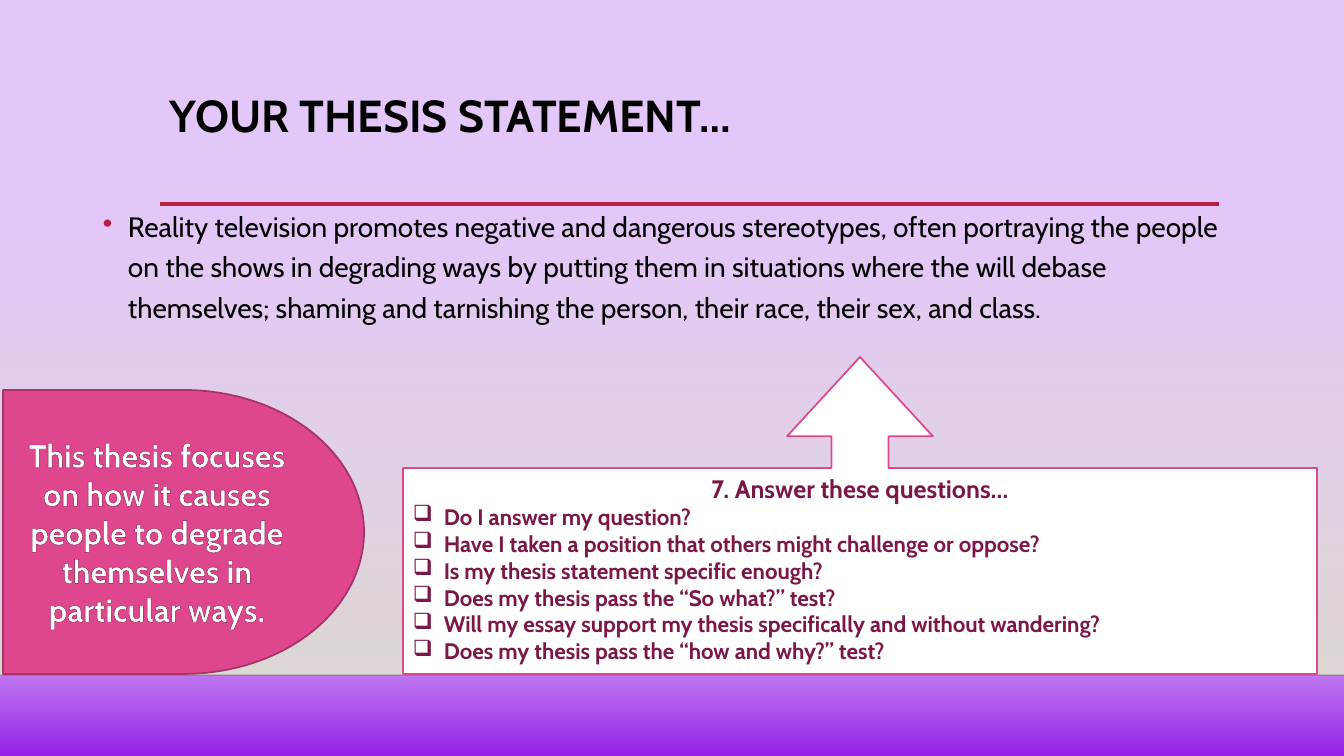
from lxml.etree import SubElement
from pptx import Presentation
from pptx.dml.color import RGBColor
from pptx.enum.shapes import MSO_CONNECTOR, MSO_SHAPE
from pptx.enum.text import MSO_ANCHOR, PP_ALIGN
from pptx.oxml.ns import qn
from pptx.util import Emu, Pt

SCALE = 12192000 / 1344
FONT = "Cabin"
BLACK, WHITE = "000000", "FFFFFF"
RED, PINK, PLUM, ROSE = "B71E42", "DE478E", "7C1646", "A43569"
SAND = "DFDBD5"

CHECKS = [
    "Do I answer my question?",
    "Have I taken a position that others might challenge or oppose?",
    "Is my thesis statement specific enough?",
    "Does my thesis pass the “So what?” test?",
    "Will my essay support my thesis specifically and without wandering?",
    "Does my thesis pass the “how and why?” test?",
]


def px(num):
    return Emu(round(num * SCALE))


def tint(code):
    return RGBColor.from_string(code)


def apply(item, vals):
    for name, val in vals.items():
        setattr(item, name, val)


def node(root, tag, **vals):
    return SubElement(root, qn(f"a:{tag}"), {k: str(v) for k, v in vals.items()})


def blend(fill, root, stops):
    fill.gradient()
    fill.gradient_angle = 270
    group = root.xpath(".//a:gsLst")[0]
    for old in list(group):
        group.remove(old)
    for pos, code, alpha in stops:
        stop = node(group, "gs", pos=pos * 1000)
        hue = node(stop, "srgbClr", val=code)
        if alpha < 100:
            node(hue, "alpha", val=alpha * 1000)


def write(para, text, size, code, bold=False, **form):
    apply(para, form)
    run = para.add_run()
    run.text = text
    apply(run.font, {"name": FONT, "size": Pt(size), "bold": bold})
    run.font.color.rgb = tint(code)
    return run


def bullet(para, mark, gap, code=None):
    props = para._p.get_or_add_pPr()
    for name, val in {"marL": px(gap), "indent": -px(gap)}.items():
        props.set(name, str(val))
    if code:
        node(node(props, "buClr"), "srgbClr", val=code)
    node(props, "buChar", char=mark)


def rule(slide, left, top, width, code, size, alpha=100):
    line = slide.shapes.add_connector(
        MSO_CONNECTOR.STRAIGHT, px(left), px(top), px(left + width), px(top))
    line.line.width = Pt(size)
    line.line.color.rgb = tint(code)
    if alpha < 100:
        hue = line._element.xpath(".//a:ln//a:srgbClr")[0]
        node(hue, "alpha", val=alpha * 1000)
    node(line._element.spPr, "effectLst")


def block(slide, kind, box, code, edge):
    shape = slide.shapes.add_shape(kind, *map(px, box))
    shape.shadow.inherit = False
    shape.fill.solid()
    shape.fill.fore_color.rgb = tint(code)
    shape.line.width = Pt(1.25)
    shape.line.color.rgb = tint(edge)
    shape.text_frame.word_wrap = True
    return shape


def label(slide, box):
    frame = slide.shapes.add_textbox(*map(px, box)).text_frame
    apply(frame, {"word_wrap": True, "vertical_anchor": MSO_ANCHOR.TOP})
    return frame.paragraphs[0]


def stage(slide, width, floor):
    blend(slide.background.fill, slide._element, [
        (0, "E4C7F9", 100), (74, "E4C7F9", 100),
        (83, "D7AAF6", 100), (100, "9622E7", 100)])
    top = 223
    wall = slide.shapes.add_shape(
        MSO_SHAPE.RECTANGLE, 0, px(top), px(width), px(floor - top))
    wall.shadow.inherit = False
    wall.line.fill.background()
    blend(wall.fill, wall._element, [(0, SAND, 0), (100, SAND, 100)])
    rule(slide, 0, floor, width, "000001", 1, 20)


def header(slide, left, top, width, height):
    rule(slide, left, top + height - 1, width, RED, 2.5)
    para = label(slide, (left, top, width, height))
    write(para, "YOUR THESIS STATEMENT…", 32, BLACK, True, line_spacing=0.9)


def thesis(slide, box):
    para = label(slide, box)
    bullet(para, "•", 25, RED)
    write(para, "Reality television promotes negative and dangerous stereotypes, "
          "often portraying the people on the shows in degrading ways by putting "
          "them in situations where the will debase themselves; shaming and "
          "tarnishing the person, their race, their sex, and class.",
          20, BLACK, line_spacing=1.2)


def callout(slide, box):
    shape = block(slide, MSO_SHAPE.UP_ARROW_CALLOUT, box, WHITE, PINK)
    for spot, val in enumerate([0.18, 0.23, 0.25, 0.65]):
        shape.adjustments[spot] = val
    frame = shape.text_frame
    frame.vertical_anchor = MSO_ANCHOR.TOP
    write(frame.paragraphs[0], "7. Answer these questions…", 18, PLUM, True,
          alignment=PP_ALIGN.CENTER)
    for text in CHECKS:
        para = frame.add_paragraph()
        bullet(para, "❑", 31)
        write(para, text, 16, PLUM, True, alignment=PP_ALIGN.LEFT)


def focus(slide, box):
    shape = block(slide, MSO_SHAPE.FLOWCHART_DELAY, box, PINK, ROSE)
    frame = shape.text_frame
    frame.vertical_anchor = MSO_ANCHOR.MIDDLE
    run = write(frame.paragraphs[0],
                "This thesis focuses on how it causes people to degrade "
                "themselves in particular ways.",
                23, WHITE, True, alignment=PP_ALIGN.CENTER)
    props = run.font._element
    edge = node(props, "ln", w=Pt(0.52))
    node(node(edge, "solidFill"), "srgbClr", val=PLUM)
    props.insert(0, edge)


def main():
    deck = Presentation()
    apply(deck, {"slide_width": px(1344), "slide_height": px(756)})
    slide = deck.slides.add_slide(deck.slide_layouts[6])
    stage(slide, 1344, 675)
    header(slide, 160, 89, 1059, 116)
    thesis(slide, (93, 198, 1159, 439))
    callout(slide, (403, 357, 914, 317))
    focus(slide, (3, 390, 361, 284))
    deck.save("out.pptx")


if __name__ == "__main__":
    main()
